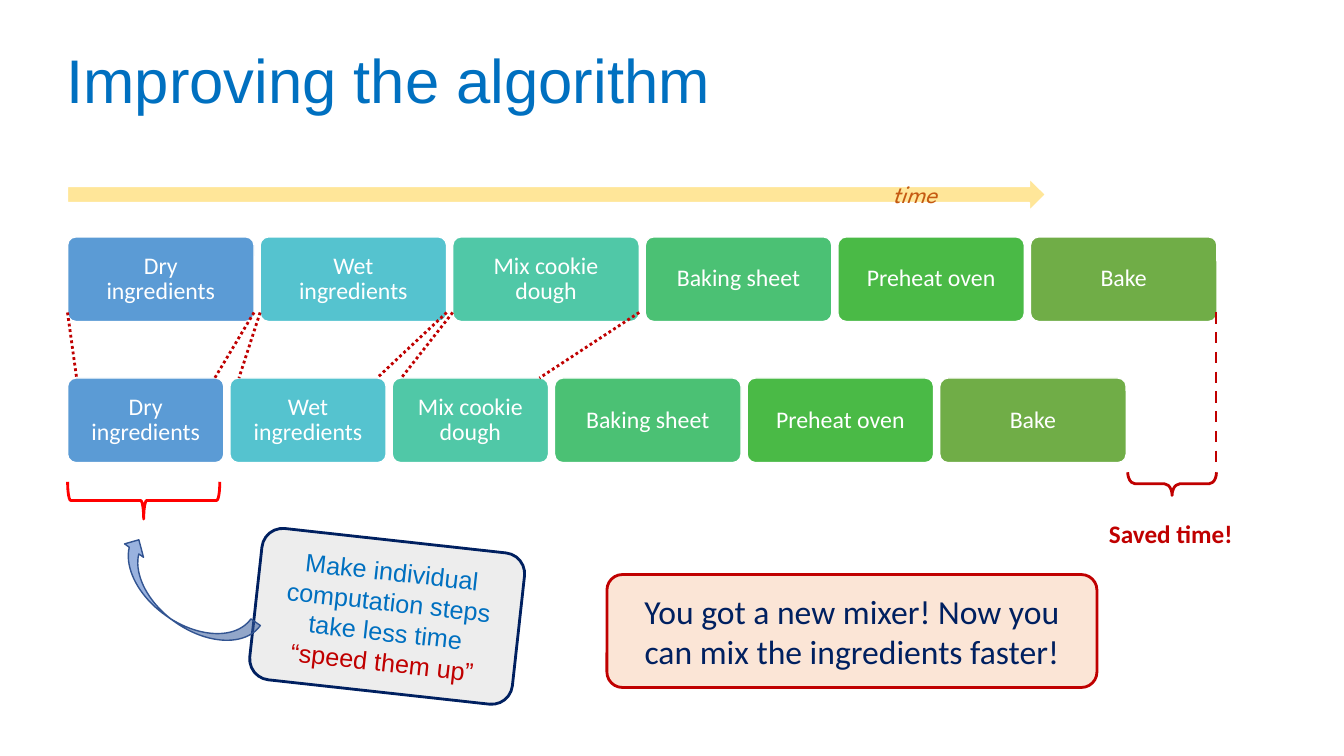
from lxml import etree
from pptx import Presentation
from pptx.dml.color import RGBColor
from pptx.enum.dml import MSO_LINE
from pptx.enum.shapes import MSO_CONNECTOR, MSO_SHAPE
from pptx.enum.text import MSO_ANCHOR, PP_ALIGN
from pptx.oxml.ns import qn
from pptx.util import Inches, Pt

LEFT, CENTER = PP_ALIGN.LEFT, PP_ALIGN.CENTER
TOP, MIDDLE = MSO_ANCHOR.TOP, MSO_ANCHOR.MIDDLE
DASH, DOT = MSO_LINE.DASH, MSO_LINE.ROUND_DOT
ROUND = MSO_SHAPE.ROUNDED_RECTANGLE
ARROW = MSO_SHAPE.RIGHT_ARROW
CURVE = MSO_SHAPE.CURVED_LEFT_ARROW
LBRACE, RBRACE = MSO_SHAPE.LEFT_BRACE, MSO_SHAPE.RIGHT_BRACE
STRAIGHT = MSO_CONNECTOR.STRAIGHT

COLORS = {
    "white": "FFFFFF", "blue": "0070C0", "navy": "002060", "red": "C00000",
    "bright": "FF0000", "sand": "FFE699", "rust": "C55A11", "peach": "FBE5D6",
    "gray": "EDEDED", "curve": "4472C4", "edge": "325491",
    "dry": "5B9BD5", "wet": "55C3CF", "mix": "50C8A7",
    "sheet": "4BC174", "heat": "4ABA46", "bake": "70AD47",
}
STEPS = [
    ("Dry ingredients", "dry"), ("Wet ingredients", "wet"),
    ("Mix cookie dough", "mix"), ("Baking sheet", "sheet"),
    ("Preheat oven", "heat"), ("Bake", "bake"),
]
TITLE = "Improving the algorithm"
AXIS = "time"
SAVED = "Saved time!"
MIXER = "You got a new mixer! Now you can mix the ingredients faster!"
SPEED = [("Make individual computation steps take less time", "blue"),
         ("“speed them up”", "red")]

START, GAP, HIGH = 0.67, 0.06, 0.84
LONG, SHORT, FASTER = 1.85, 1.55, 3
SLOW_Y, FAST_Y = 2.35, 3.75
INSET = 0.09

deck = Presentation()
deck.slide_width, deck.slide_height = Inches(13.33), Inches(7.5)
slide = deck.slides.add_slide(deck.slide_layouts[6])


def rgb(name):
    return RGBColor.from_string(COLORS[name])


def write(shape, text, size, color="white", font="Calibri", align=CENTER,
          anchor=MIDDLE, bold=False, italic=False, space=1.0, pad=None,
          wrap=True):
    frame = shape.text_frame
    frame.word_wrap = wrap
    frame.vertical_anchor = anchor
    if pad is not None:
        frame.margin_left = frame.margin_right = Inches(pad)
        frame.margin_top = frame.margin_bottom = Inches(pad)
    lines = [(text, color)] if isinstance(text, str) else text
    for i, (words, tint) in enumerate(lines):
        para = frame.add_paragraph() if i else frame.paragraphs[0]
        para.alignment = align
        para.line_spacing = space
        run = para.add_run()
        run.text = words
        run.font.size = Pt(size)
        run.font.name = font
        run.font.bold, run.font.italic = bold, italic
        run.font.color.rgb = rgb(tint)


def label(box, text, size, **style):
    area = slide.shapes.add_textbox(*map(Inches, box))
    write(area, text, size, align=LEFT, **style)


def draw(kind, box, fill, line, width=2, turn=0, adjust=()):
    shape = slide.shapes.add_shape(kind, *map(Inches, box))
    shape.shadow.inherit = False
    shape.rotation = turn
    for i, value in enumerate(adjust):
        shape.adjustments[i] = value
    if fill:
        shape.fill.solid()
        shape.fill.fore_color.rgb = rgb(fill)
    else:
        shape.fill.background()
    shape.line.color.rgb = rgb(line)
    shape.line.width = Pt(width)
    return shape


def link(x1, y1, x2, y2, dash):
    line = slide.shapes.add_connector(STRAIGHT, *map(Inches, (x1, y1, x2, y2)))
    line.line.color.rgb = rgb("red")
    line.line.width = Pt(2)
    line.line.dash_style = dash
    etree.SubElement(line._element.spPr, qn("a:effectLst"))


def row(top, widths):
    spans, x = [], START
    for (name, fill), wide in zip(STEPS, widths):
        box = draw(ROUND, (x, top, wide, HIGH), fill, "white", 1, adjust=(0.1,))
        write(box, name, 17, space=0.9, pad=0.17)
        spans.append((x, x + wide))
        x += wide + GAP
    return spans


def build():
    label((0.56, 0.4, 11.85, 0.86), TITLE, 44, color="blue", font="Arial",
          space=0.9)
    count = len(STEPS)
    fast = row(FAST_Y, [SHORT] * FASTER + [LONG] * (count - FASTER))
    slow = row(SLOW_Y, [LONG] * count)

    mixer = draw(ROUND, (6.02, 5.7, 4.86, 1.12), "peach", "red",
                 adjust=(0.137,))
    write(mixer, MIXER, 24, color="navy")

    draw(LBRACE, (11.51, 4.36, 0.23, 0.88), None, "red", turn=270,
         adjust=(0.323, 0.5))
    link(12.06, 3.1, 12.06, FAST_Y + HIGH, DASH)
    label((10.9, 5.09, 1.44, 0.4), SAVED, 18, color="red", bold=True,
          anchor=TOP, wrap=False)

    for (l1, r1), (l2, r2) in list(zip(slow, fast))[:FASTER]:
        link(l1, 3.1, l2 + INSET, FAST_Y, DOT)
        link(r1, 3.1, r2 - INSET, FAST_Y, DOT)

    draw(ARROW, (START, 1.77, 9.7, 0.32), "sand", "white", 1)
    label((8.75, 1.72, 0.94, 0.4), AXIS, 18, color="rust",
          font="League Spartan", italic=True, anchor=TOP)

    speed = draw(ROUND, (2.53, 5.36, 2.62, 1.51), "gray", "navy", turn=6.3,
                 adjust=(0.137,))
    write(speed, SPEED, 18, font="Arial")
    draw(RBRACE, (1.24, 4.21, 0.37, 1.51), None, "bright", turn=90)
    curve = draw(CURVE, (1.57, 5.14, 0.46, 1.59), "curve", "edge", 1,
                 turn=125.2)
    tint = curve._element.spPr.find(qn("a:solidFill"))[0]
    etree.SubElement(tint, qn("a:alpha")).set("val", "54000")


if __name__ == "__main__":
    build()
    deck.save("out.pptx")
